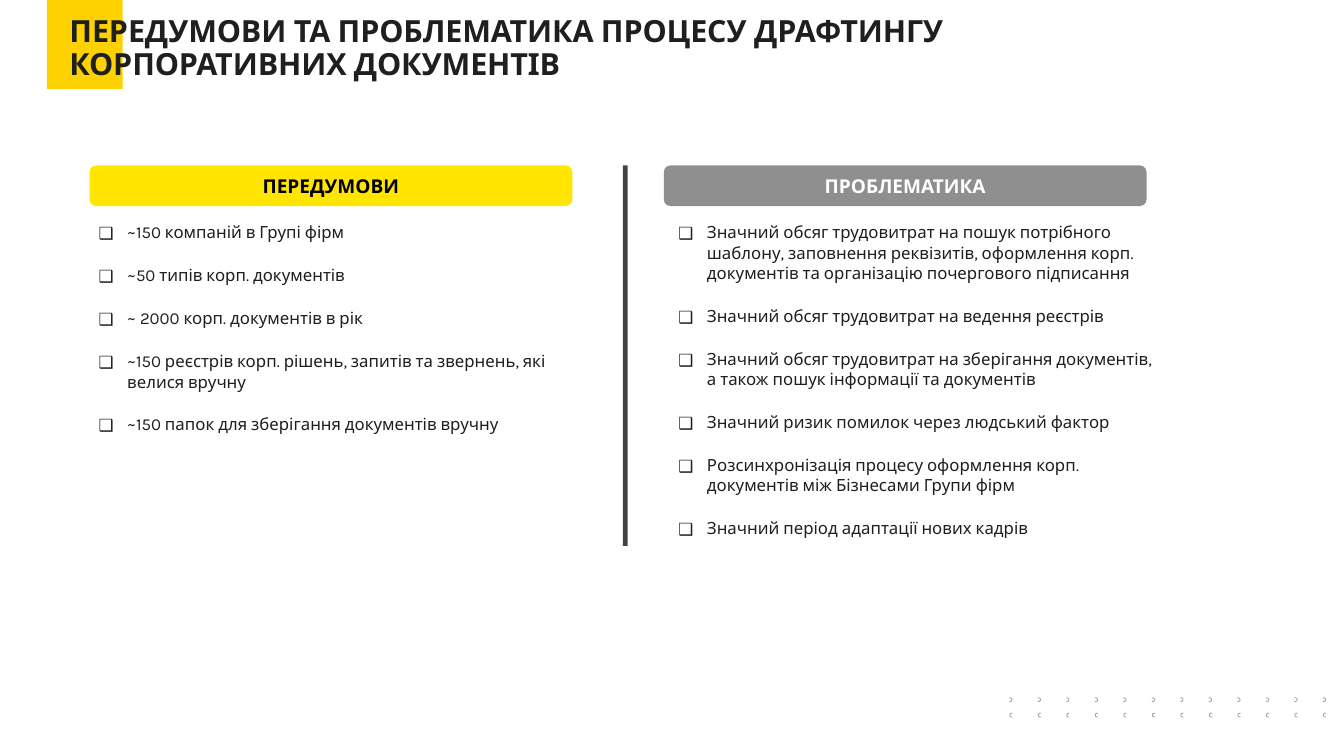
from dataclasses import dataclass

from lxml.etree import SubElement
from pptx import Presentation
from pptx.dml.color import RGBColor
from pptx.enum.shapes import MSO_SHAPE
from pptx.enum.text import MSO_ANCHOR, MSO_AUTO_SIZE, PP_ALIGN
from pptx.oxml.ns import qn
from pptx.util import Pt

# Content
TITLE = "ПЕРЕДУМОВИ ТА ПРОБЛЕМАТИКА ПРОЦЕСУ ДРАФТИНГУ КОРПОРАТИВНИХ ДОКУМЕНТІВ"
CAUSES = [
    "~150 компаній в Групі фірм",
    "~50 типів корп. документів",
    "~ 2000 корп. документів в рік",
    "~150 реєстрів корп. рішень, запитів та звернень, які велися вручну",
    "~150 папок для зберігання документів вручну",
]
ISSUES = [
    "Значний обсяг трудовитрат на пошук потрібного шаблону, заповнення "
    "реквізитів, оформлення корп. документів та організацію почергового підписання",
    "Значний обсяг трудовитрат на ведення реєстрів",
    "Значний обсяг трудовитрат на зберігання документів, а також пошук "
    "інформації та документів",
    "Значний ризик помилок через людський фактор",
    "Розсинхронізація процесу оформлення корп. документів між Бізнесами Групи фірм",
    "Значний період адаптації нових кадрів",
]


@dataclass(frozen=True)
class Theme:
    font: str = "Karla"
    ink: str = "1F1F1F"
    black: str = "000000"
    white: str = "FFFFFF"
    gold: str = "FED100"
    yellow: str = "FFE500"
    gray: str = "8F8F8F"
    bar: str = "434343"
    dot: str = "9B9B9A"
    title: float = 24
    head: float = 15
    body: float = 13.2


THEME = Theme()

# Columns: heading, fill, text colour, heading left, list left, list height, items
COLUMNS = [
    ("ПЕРЕДУМОВИ", THEME.yellow, THEME.black, 70.5, 70.5, 176.5, CAUSES),
    ("ПРОБЛЕМАТИКА", THEME.gray, THEME.white, 522.7, 527, 258.5, ISSUES),
]
TOP = 130.3

# Half ring in hundredths of a point, and the grid it repeats on
RING = [(70, 0), (0, 0), (0, 60), (70, 60), (145, 90), (185, 180), (145, 270),
        (70, 300), (0, 300), (0, 360), (70, 360), (150, 340), (215, 270),
        (245, 180), (215, 90), (150, 20)]
RING_WIDTH = 245
GRID_LEFT, GRID_STEP, GRID_COUNT = 794.9, 22.45, 12
GRID_ROWS = [(549.3, False), (561.5, True)]


def place(shape, left, top, width, height):
    shape.left, shape.top = Pt(left), Pt(top)
    shape.width, shape.height = Pt(width), Pt(height)


def paint(shape, color):
    shape.shadow.inherit = False
    shape.fill.solid()
    shape.fill.fore_color.rgb = RGBColor.from_string(color)
    shape.line.fill.background()


def block(shapes, kind, left, top, width, height, color):
    shape = shapes.add_shape(kind, Pt(left), Pt(top), Pt(width), Pt(height))
    paint(shape, color)
    return shape


def bullet(para):
    props = para._p.get_or_add_pPr()
    props.set("marL", str(Pt(22.5)))
    props.set("indent", str(Pt(-22.5)))
    tint = SubElement(props, qn("a:buClr"))
    SubElement(tint, qn("a:srgbClr"), val=THEME.ink)
    SubElement(props, qn("a:buFont"), typeface="Noto Sans Symbols")
    SubElement(props, qn("a:buChar"), char="❑")


def write(frame, *lines, size, color=THEME.ink, bold=False, align=PP_ALIGN.LEFT,
          anchor=MSO_ANCHOR.TOP, fit=MSO_AUTO_SIZE.NONE, leading=1.0,
          after=0, track=0, marks=False):
    frame.word_wrap = True
    frame.auto_size = fit
    frame.vertical_anchor = anchor
    for index, line in enumerate(lines):
        para = frame.add_paragraph() if index else frame.paragraphs[0]
        if marks:
            bullet(para)
        para.alignment = align
        para.line_spacing = leading
        para.space_before = Pt(0)
        para.space_after = Pt(after)
        run = para.add_run()
        run.text = line
        font = run.font
        font.name, font.size, font.bold = THEME.font, Pt(size), bold
        font.color.rgb = RGBColor.from_string(color)
        if track:
            run._r.get_or_add_rPr().set("spc", str(track))


def ring(shapes, left, top, flip):
    points = [(RING_WIDTH - x if flip else x, y) for x, y in RING]
    pen = shapes.build_freeform(*points[0], scale=Pt(0.01))
    pen.add_line_segments(points[1:], close=True)
    paint(pen.convert_to_shape(Pt(left), Pt(top)), THEME.dot)


def main():
    deck = Presentation()
    deck.slide_width, deck.slide_height = Pt(1058.4), Pt(595.44)
    slide = deck.slides.add_slide(deck.slide_layouts.get_by_name("Two Content"))
    shapes = slide.shapes
    title, *lists = slide.placeholders

    # Accent behind the title
    accent = block(shapes, MSO_SHAPE.RECTANGLE, 36.9, 0, 59.8, 70, THEME.gold)
    shapes._spTree.insert(2, accent._element)

    # Title
    place(title, 47.5, 9.4, 870.5, 61.2)
    write(title.text_frame, TITLE, size=THEME.title, bold=True, leading=0.9, track=-10)

    # Columns
    for holder, column in zip(lists, COLUMNS):
        name, fill, color, left, inner, height, items = column
        head = block(shapes, MSO_SHAPE.ROUNDED_RECTANGLE, left, TOP, 380.2, 32, fill)
        write(head.text_frame, name, size=THEME.head, color=color, bold=True,
              align=PP_ALIGN.CENTER, anchor=MSO_ANCHOR.MIDDLE)
        place(holder, inner, 171.4, 390.2, height)
        write(holder.text_frame, *items, size=THEME.body, after=18, marks=True,
              fit=MSO_AUTO_SIZE.SHAPE_TO_FIT_TEXT)

    # Divider
    block(shapes, MSO_SHAPE.RECTANGLE, 490.5, TOP, 3.8, 299.7, THEME.bar)

    # Corner pattern
    for top, flip in GRID_ROWS:
        for step in range(GRID_COUNT):
            ring(shapes, GRID_LEFT + step * GRID_STEP, top, flip)

    deck.save("out.pptx")


if __name__ == "__main__":
    main()
